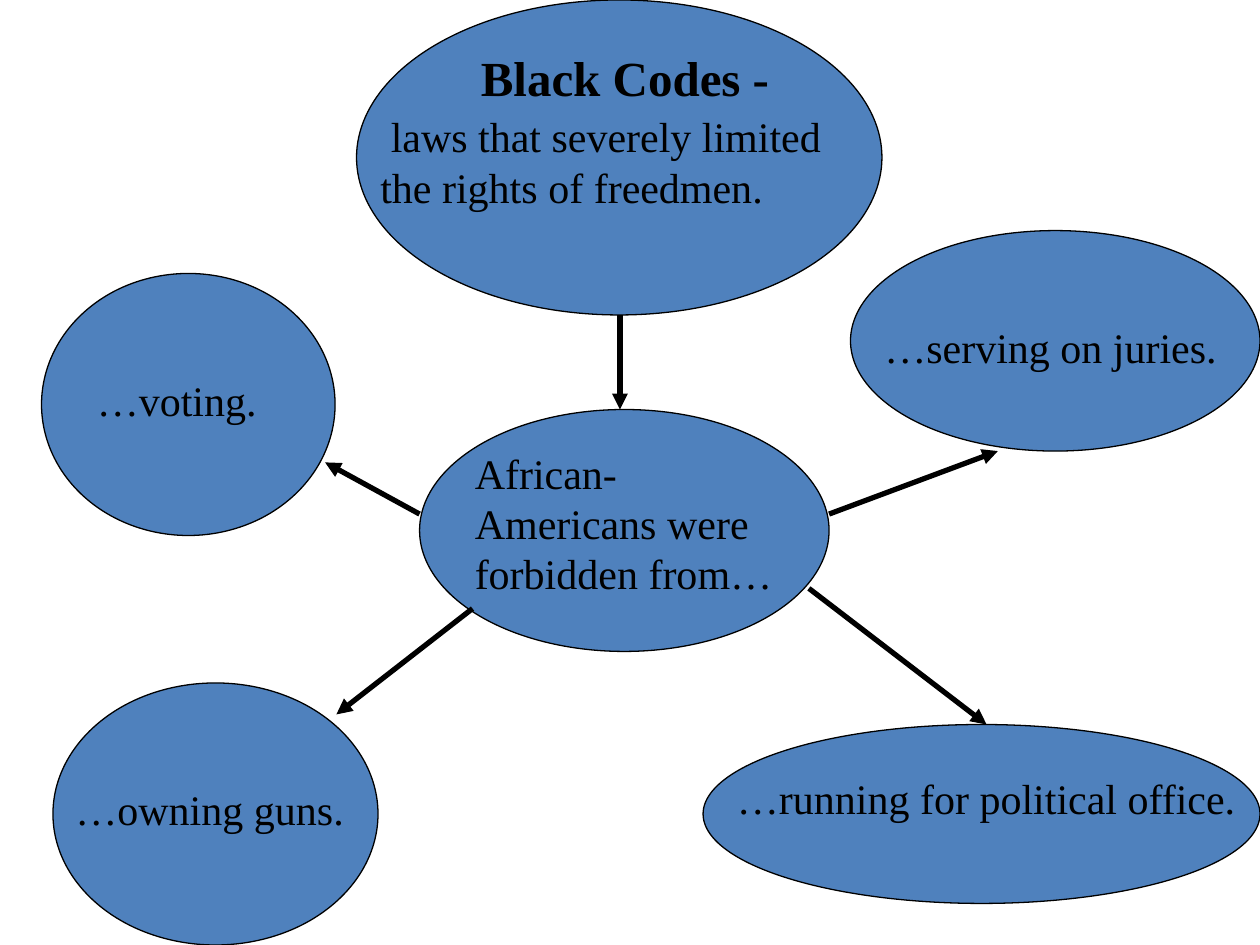
from pptx import Presentation
from pptx.dml.color import RGBColor
from pptx.enum.shapes import MSO_CONNECTOR, MSO_SHAPE
from pptx.enum.text import MSO_AUTO_SIZE, PP_ALIGN
from pptx.oxml.ns import qn
from pptx.util import Inches, Pt
from lxml.etree import SubElement

BLUE = RGBColor(0x4F, 0x81, 0xBD)
BLACK = RGBColor(0, 0, 0)
FONT = "Times New Roman"

# left, top, width, height
BUBBLES = [
    (2.83, 0, 4.17, 2.5),       # definition
    (3.33, 3.25, 3.25, 1.92),   # centre
    (0.33, 2.17, 2.33, 2.08),   # voting
    (0.42, 5.42, 2.58, 2.08),   # guns
    (5.58, 5.75, 4.42, 1.42),   # office
    (6.75, 1.83, 3.25, 1.75),   # juries
]

LABELS = [
    (" laws that severely limited the rights of freedmen.", (2.92, 0.83, 3.92, 0.9)),
    ("African-Americans were forbidden from…", (3.67, 3.5, 2.67, 1.3)),
    ("…owning guns.", (0.5, 6.17, 2.42, 0.5)),
    ("…serving on juries.", (6.92, 2.5, 3.08, 0.5)),
    ("…running for political office.", (5.75, 6.08, 4.25, 0.5)),
]

# start x, start y, end x, end y
ARROWS = [
    (4.92, 2.5, 4.92, 3.25),
    (3.33, 4.08, 2.58, 3.67),
    (3.75, 4.83, 2.67, 5.67),
    (6.42, 4.67, 7.83, 5.75),
    (6.58, 4.08, 7.92, 3.58),
]


def add_bubble(slide, box):
    shape = slide.shapes.add_shape(MSO_SHAPE.OVAL, *map(Inches, box))
    shape.shadow.inherit = False
    shape.fill.solid()
    shape.fill.fore_color.rgb = BLUE
    shape.line.color.rgb = BLACK
    shape.line.width = Pt(0.75)


def add_label(slide, text, box, size=24, bold=False, align=PP_ALIGN.LEFT, wrap=True):
    frame = slide.shapes.add_textbox(*map(Inches, box)).text_frame
    frame.word_wrap = wrap
    frame.auto_size = MSO_AUTO_SIZE.SHAPE_TO_FIT_TEXT
    paragraph = frame.paragraphs[0]
    paragraph.alignment = align
    run = paragraph.add_run()
    run.text = text
    run.font.name = FONT
    run.font.size = Pt(size)
    run.font.bold = bold
    run.font.color.rgb = BLACK


def add_arrow(slide, ends):
    connector = slide.shapes.add_connector(MSO_CONNECTOR.STRAIGHT, *map(Inches, ends))
    connector.line.color.rgb = BLACK
    connector.line.width = Pt(3)
    properties = connector.element.spPr
    SubElement(properties.find(qn("a:ln")), qn("a:tailEnd"), type="triangle")
    SubElement(properties, qn("a:effectLst"))


def main():
    presentation = Presentation()
    presentation.slide_width = Inches(10)
    presentation.slide_height = Inches(7.5)
    slide = presentation.slides.add_slide(presentation.slide_layouts[6])

    # Bubbles
    for box in BUBBLES:
        add_bubble(slide, box)

    # Heading and labels
    add_label(slide, "Black Codes -", (3.17, 0.33, 3.58, 0.57),
              size=28, bold=True, align=PP_ALIGN.CENTER)
    add_label(slide, "…voting.", (0.67, 2.92, 1.47, 0.5), wrap=False)
    for text, box in LABELS:
        add_label(slide, text, box)

    # Arrows between bubbles
    for ends in ARROWS:
        add_arrow(slide, ends)

    presentation.save("out.pptx")


if __name__ == "__main__":
    main()
